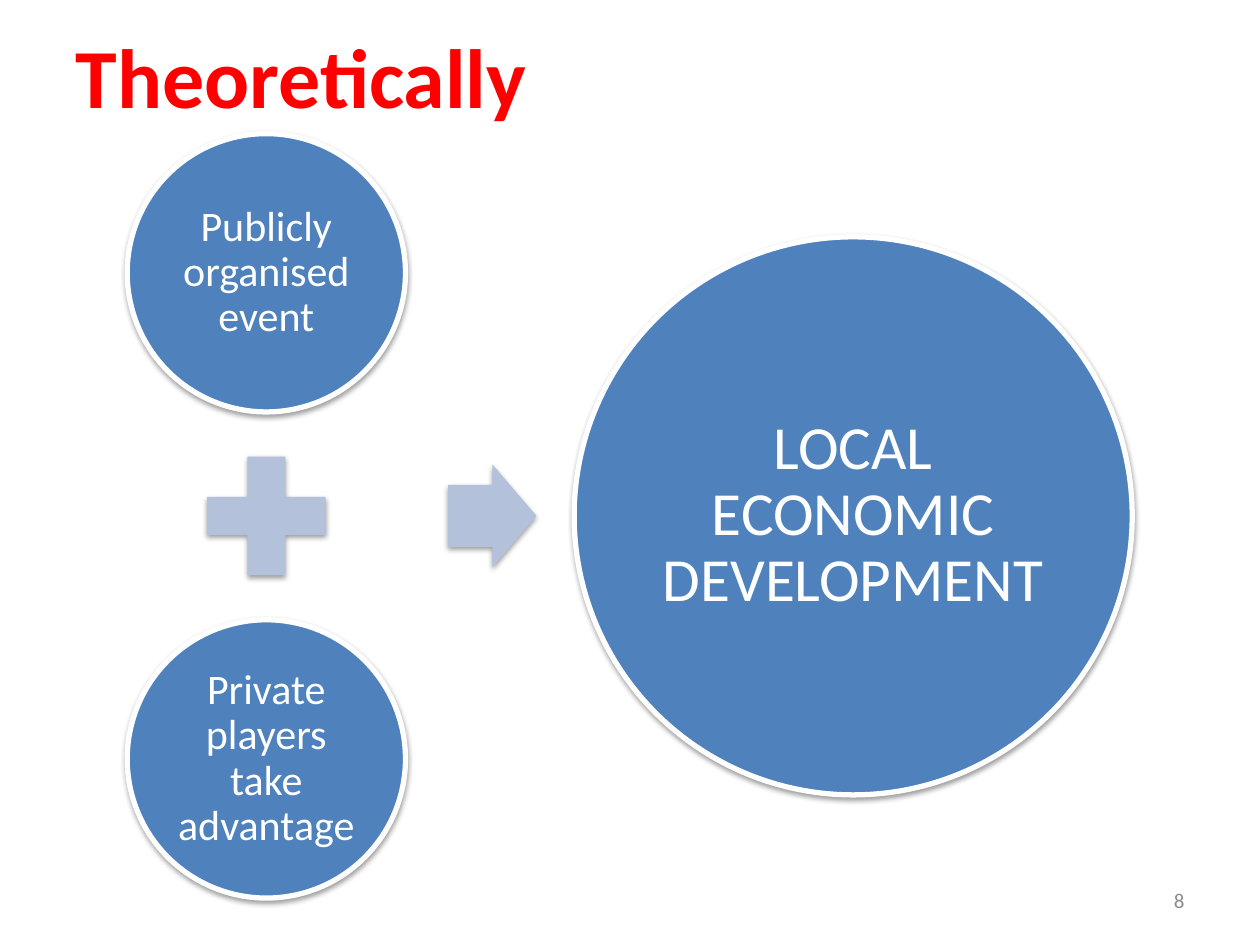
from dataclasses import dataclass

from lxml import etree
from pptx import Presentation
from pptx.dml.color import RGBColor
from pptx.enum.shapes import MSO_SHAPE
from pptx.enum.text import MSO_ANCHOR, MSO_AUTO_SIZE, PP_ALIGN
from pptx.oxml.ns import qn
from pptx.util import Cm, Pt

CIRCLE, PLUS, ARROW = MSO_SHAPE.OVAL, MSO_SHAPE.MATH_PLUS, MSO_SHAPE.RIGHT_ARROW
LEFT, CENTER, RIGHT = PP_ALIGN.LEFT, PP_ALIGN.CENTER, PP_ALIGN.RIGHT
MIDDLE = MSO_ANCHOR.MIDDLE
NO_FIT = MSO_AUTO_SIZE.NONE
TITLE_ONLY = 5


@dataclass(frozen=True)
class Theme:
    font: str = "Calibri"
    title: str = "FF0000"
    circle: str = "4F81BD"
    sign: str = "B3C1DB"
    white: str = "FFFFFF"
    number: str = "8C8C8C"
    title_size: int = 48
    cause_size: int = 24
    result_size: int = 35
    number_size: int = 12
    outline: int = 3


THEME = Theme()

HEADING = "Theoretically"
CAUSES = ["Publicly organised event", "Private players take advantage"]
RESULT = "LOCAL ECONOMIC DEVELOPMENT"
PAGE_NUMBER = "8"

CAUSE_X, MIDDLE_Y = 5.37, 10.4
CAUSE_SIZE, PLUS_SIZE, RESULT_SIZE = 5.61, 3.25, 11.25
ARROW_W, ARROW_H = 1.78, 2.08
STACK_GAP, ARROW_GAP, RESULT_GAP = 0.47, 0.86, 0.76


def color(value):
    return RGBColor.from_string(value)


def write(frame, text, size, hue, align, bold=False):
    frame.word_wrap = True
    frame.auto_size = NO_FIT
    frame.vertical_anchor = MIDDLE
    paragraph = frame.paragraphs[0]
    paragraph.alignment = align
    run = paragraph.add_run()
    run.text = text
    run.font.name = THEME.font
    run.font.size = Pt(size)
    run.font.bold = bold
    run.font.color.rgb = color(hue)
    return paragraph


def add_soft_shadow(part):
    part.shadow.inherit = False
    effects = part._element.spPr.find(qn("a:effectLst"))
    shadow = etree.SubElement(effects, qn("a:outerShdw"), blurRad="40000",
                              dist="20000", dir="5400000", rotWithShape="0")
    black = etree.SubElement(shadow, qn("a:srgbClr"), val="000000")
    etree.SubElement(black, qn("a:alpha"), val="38000")


def add_part(slide, kind, x, y, width, height, fill):
    part = slide.shapes.add_shape(kind, Cm(x - width / 2), Cm(y - height / 2),
                                  Cm(width), Cm(height))
    part.fill.solid()
    part.fill.fore_color.rgb = color(fill)
    part.line.fill.background()
    add_soft_shadow(part)
    return part


def add_circle(slide, x, y, diameter, text, size, inset):
    circle = add_part(slide, CIRCLE, x, y, diameter, diameter, THEME.circle)
    circle.line.color.rgb = color(THEME.white)
    circle.line.width = Pt(THEME.outline)
    frame = circle.text_frame
    frame.margin_left = frame.margin_right = Cm(inset)
    frame.margin_top = frame.margin_bottom = Cm(inset)
    write(frame, text, size, THEME.white, CENTER).line_spacing = 0.9


def add_equation(slide):
    step = (CAUSE_SIZE + PLUS_SIZE) / 2 + STACK_GAP
    for side, cause in zip((-1, 1), CAUSES):
        add_circle(slide, CAUSE_X, MIDDLE_Y + side * step, CAUSE_SIZE,
                   cause, THEME.cause_size, 0.08)
    add_part(slide, PLUS, CAUSE_X, MIDDLE_Y, PLUS_SIZE, PLUS_SIZE, THEME.sign)

    arrow_x = CAUSE_X + (CAUSE_SIZE + ARROW_W) / 2 + ARROW_GAP
    arrow = add_part(slide, ARROW, arrow_x, MIDDLE_Y, ARROW_W, ARROW_H, THEME.sign)
    arrow.adjustments[0], arrow.adjustments[1] = 0.6, 0.5

    result_x = arrow_x + (ARROW_W + RESULT_SIZE) / 2 + RESULT_GAP
    add_circle(slide, result_x, MIDDLE_Y, RESULT_SIZE,
               RESULT, THEME.result_size, 0.12)


def main():
    deck = Presentation()
    deck.slide_width, deck.slide_height = Cm(25.4), Cm(19.05)
    slide = deck.slides.add_slide(deck.slide_layouts[TITLE_ONLY])

    heading = slide.shapes.title
    heading.left, heading.top = Cm(1.27), Cm(0.33)
    heading.width, heading.height = Cm(22.86), Cm(2.36)
    write(heading.text_frame, HEADING, THEME.title_size, THEME.title, LEFT, bold=True)

    add_equation(slide)

    number = slide.shapes.add_textbox(Cm(18.2), Cm(17.65), Cm(5.93), Cm(1.01))
    write(number.text_frame, PAGE_NUMBER, THEME.number_size, THEME.number, RIGHT)

    deck.save("out.pptx")


if __name__ == "__main__":
    main()
